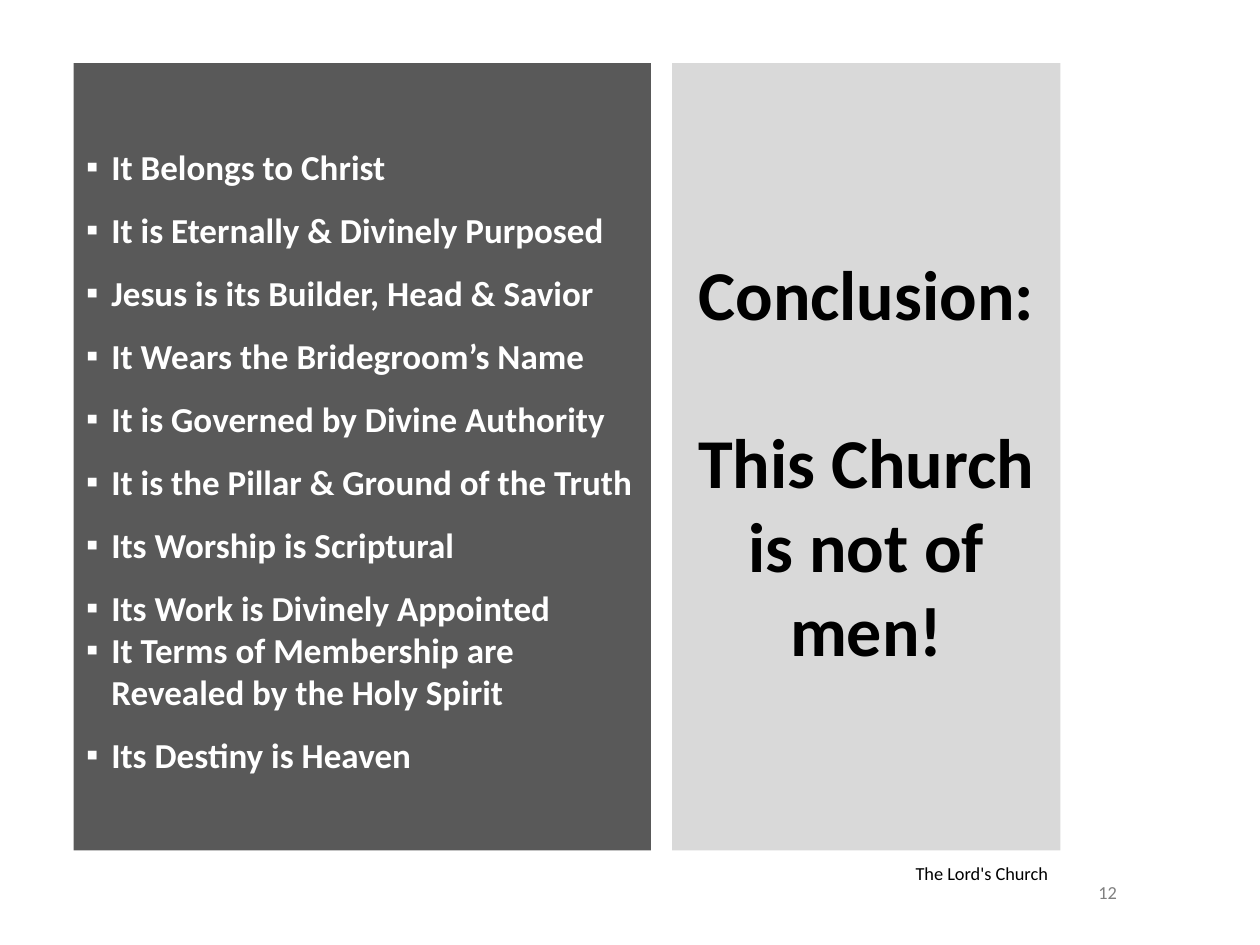
from lxml import etree
from pptx import Presentation
from pptx.dml.color import RGBColor
from pptx.enum.text import MSO_ANCHOR as Anchor, MSO_AUTO_SIZE as AutoSize, PP_ALIGN as Align
from pptx.oxml.ns import qn
from pptx.util import Pt

COLORS = {
    "panel_dark": "595959",
    "panel_light": "D9D9D9",
    "white": "FFFFFF",
    "black": "000000",
    "gray": "808080",
}
FONT = "Calibri"
POINTS = [
    "It Belongs to Christ",
    "It is Eternally & Divinely Purposed",
    "Jesus is its Builder, Head & Savior",
    "It Wears the Bridegroom’s Name",
    "It is Governed by Divine Authority",
    "It is the Pillar & Ground of the Truth",
    "Its Worship is Scriptural",
    "Its Work is Divinely Appointed",
    "It Terms of Membership are Revealed by the Holy Spirit",
    "Its Destiny is Heaven",
]
TIGHT_POINT = 8


def color(name):
    return RGBColor.from_string(COLORS[name])


def place(shape, box):
    shape.left, shape.top, shape.width, shape.height = (Pt(value) for value in box)


def fill_panel(shape, fill):
    shape.fill.solid()
    shape.fill.fore_color.rgb = color(fill)


def add_bullet(paragraph, indent, bullet_color):
    properties = paragraph._p.get_or_add_pPr()
    properties.set("marL", str(Pt(indent)))
    properties.set("indent", str(-Pt(indent)))
    bullet_fill = etree.SubElement(properties, qn("a:buClr"))
    etree.SubElement(bullet_fill, qn("a:srgbClr"), val=COLORS[bullet_color])
    etree.SubElement(properties, qn("a:buFont"), typeface="Arial")
    etree.SubElement(properties, qn("a:buChar"), char="▪")


def write(paragraph, text, size, ink, bold=False, align=Align.LEFT, line=None, before=0):
    paragraph.alignment = align
    paragraph.space_before = Pt(before)
    if line:
        paragraph.line_spacing = Pt(line)
    run = paragraph.add_run()
    run.text = text
    run.font.name = FONT
    run.font.size = Pt(size)
    run.font.bold = bold
    run.font.color.rgb = color(ink)


def prepare_frame(shape, anchor, margin_top=3.6):
    frame = shape.text_frame
    frame.word_wrap = True
    frame.auto_size = AutoSize.NONE
    frame.vertical_anchor = anchor
    frame.margin_top = Pt(margin_top)
    return frame


def next_paragraph(frame, index):
    return frame.add_paragraph() if index else frame.paragraphs[0]


def build_points(shape, box):
    place(shape, box)
    fill_panel(shape, "panel_dark")
    frame = prepare_frame(shape, Anchor.TOP, margin_top=35)
    for index, text in enumerate(POINTS):
        paragraph = next_paragraph(frame, index)
        add_bullet(paragraph, 14.4, "white")
        write(paragraph, text, size=20, ink="white", bold=True,
              line=24 if index == TIGHT_POINT else 36)


def build_conclusion(shape, box):
    place(shape, box)
    fill_panel(shape, "panel_light")
    frame = prepare_frame(shape, Anchor.MIDDLE, margin_top=8)
    for index, text in enumerate(["Conclusion:", "This Church is not of men!"]):
        write(next_paragraph(frame, index), text, size=40, ink="black", bold=True,
              align=Align.CENTER, line=48, before=48 * index)


def build_label(slide, box, text, ink, align, anchor):
    shape = slide.shapes.add_textbox(*(Pt(value) for value in box))
    frame = prepare_frame(shape, anchor)
    write(frame.paragraphs[0], text, size=10.5, ink=ink, align=align)


def main():
    presentation = Presentation()
    presentation.slide_width, presentation.slide_height = Pt(720), Pt(540)
    slide = presentation.slides.add_slide(presentation.slide_layouts[1])
    build_points(slide.placeholders[1], (42, 36, 330, 450))
    build_conclusion(slide.shapes.title, (384, 36, 222, 450))
    build_label(slide, (612, 504, 42, 12), "12", "gray", Align.CENTER, Anchor.MIDDLE)
    build_label(slide, (384, 496, 222, 12.5), "The Lord's Church", "black",
                Align.RIGHT, Anchor.BOTTOM)
    presentation.save("out.pptx")


if __name__ == "__main__":
    main()
